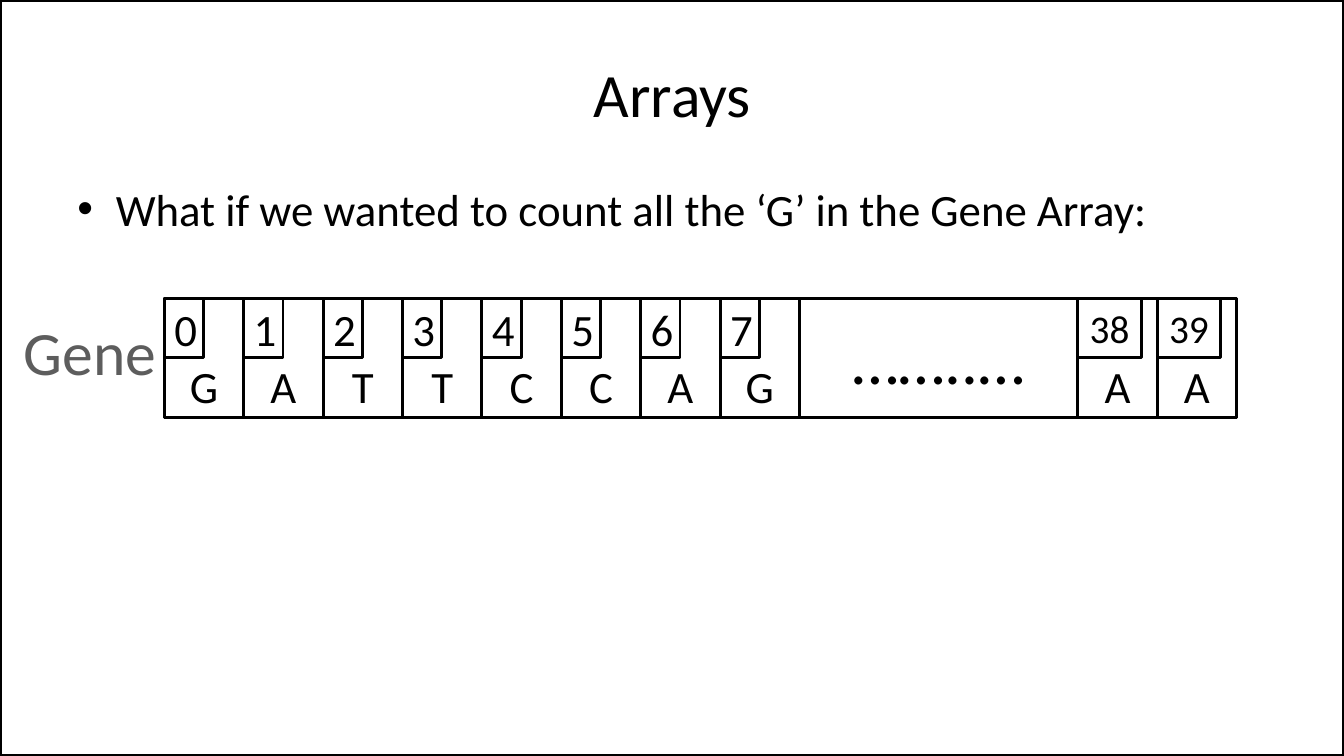
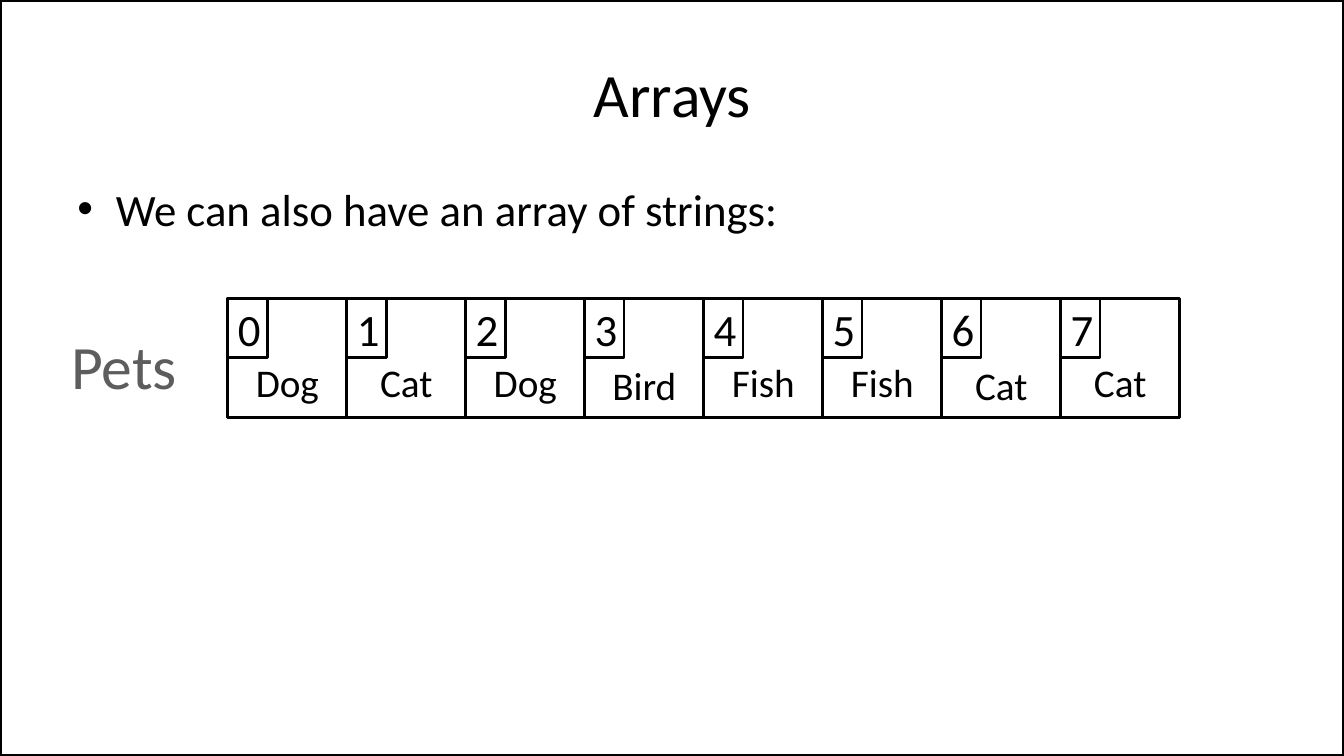
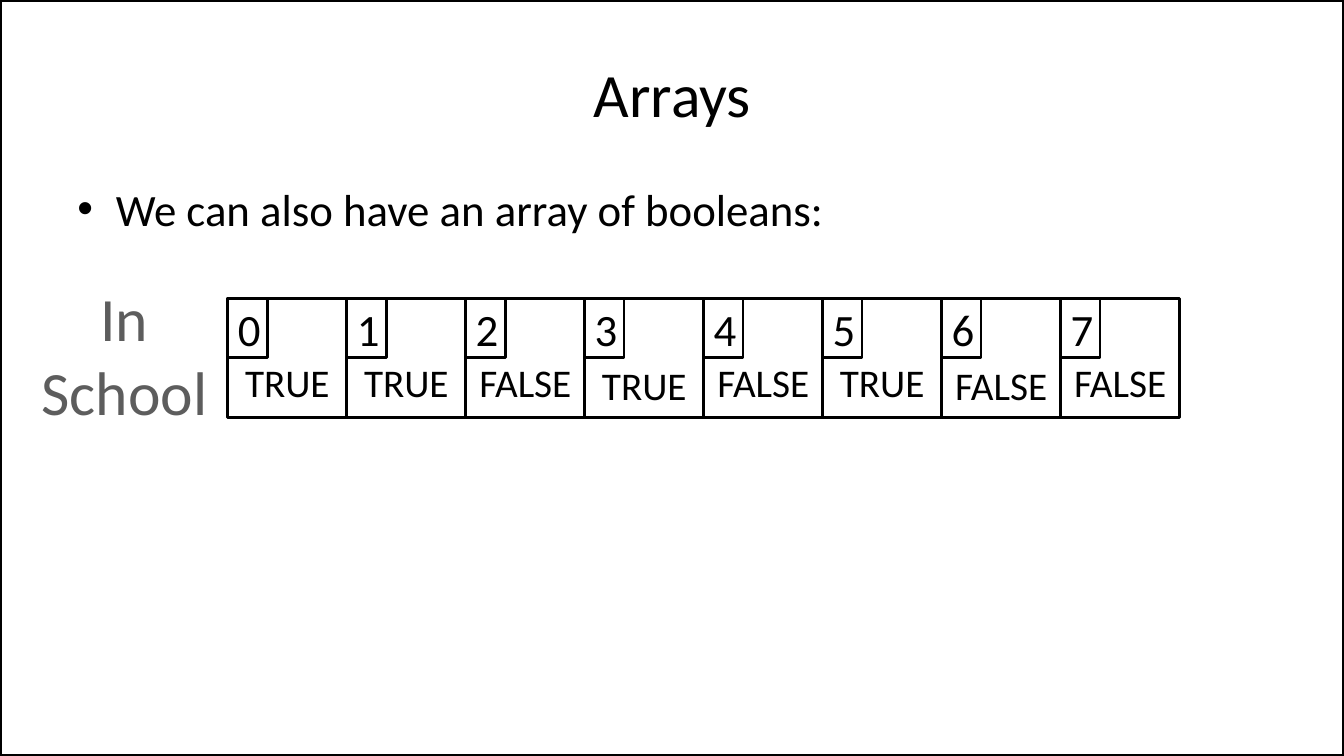
from dataclasses import dataclass

from lxml import etree
from pptx import Presentation
from pptx.dml.color import RGBColor
from pptx.enum.shapes import MSO_SHAPE
from pptx.enum.text import MSO_ANCHOR, PP_ALIGN
from pptx.oxml.ns import qn
from pptx.util import Inches, Pt


@dataclass(frozen=True)
class Theme:
    font: str = "Calibri"
    ink: RGBColor = RGBColor(0x00, 0x00, 0x00)
    label_grey: RGBColor = RGBColor(0x5D, 0x5D, 0x5D)
    title_size: int = 44
    body_size: int = 32
    small_size: int = 28
    dots_size: int = 48
    border_width: int = 3
    line_width: int = 2


PAGE_WIDTH, PAGE_HEIGHT = 13.33, 7.5
ARRAY_TOP, CELL_HEIGHT = 2.96, 1.18
INDEX_WIDTH, INDEX_HEIGHT = 0.39, 0.59
WIDE_INDEX_WIDTH = 0.63
TEXT_INSET = 0.05
LINE_HEIGHT = 1.22


class ArrayDeck:
    def __init__(self, theme):
        self.theme = theme
        self.deck = Presentation()
        self.deck.slide_width = Inches(PAGE_WIDTH)
        self.deck.slide_height = Inches(PAGE_HEIGHT)
        self.page = None

    def add_page(self, title, bullet):
        self.page = self.deck.slides.add_slide(self.deck.slide_layouts[6])
        self.rectangle(0, 0, PAGE_WIDTH, PAGE_HEIGHT, self.theme.border_width)
        self.text_box(0.67, 0.3, 12, 1.25, [title], self.theme.title_size,
                      anchor=MSO_ANCHOR.MIDDLE)
        self.text_box(0.67, 1.75, 12, 4.95, [bullet], self.theme.body_size,
                      align=PP_ALIGN.LEFT, bullet="•")

    def rectangle(self, left, top, width, height, line_width=None):
        shape = self.page.shapes.add_shape(
            MSO_SHAPE.RECTANGLE, *map(Inches, (left, top, width, height)))
        shape.shadow.inherit = False
        shape.fill.background()
        shape.line.color.rgb = self.theme.ink
        shape.line.width = Pt(line_width or self.theme.line_width)
        return shape

    def set_text(self, box, lines, size, color=None, align=PP_ALIGN.CENTER,
                 anchor=MSO_ANCHOR.MIDDLE, wrap=True, bullet=None):
        frame = box.text_frame
        frame.word_wrap = wrap
        frame.vertical_anchor = anchor
        font_format = {"name": self.theme.font, "size": Pt(size)}
        for number, line in enumerate(lines):
            para = frame.add_paragraph() if number else frame.paragraphs[0]
            para.alignment = align
            if bullet:
                self.add_bullet(para, bullet)
            span = para.add_run()
            span.text = line
            for name, value in font_format.items():
                setattr(span.font, name, value)
            span.font.color.rgb = color or self.theme.ink

    def add_bullet(self, para, mark):
        properties = para._p.get_or_add_pPr()
        properties.set("marL", str(Inches(0.38)))
        properties.set("indent", str(Inches(-0.38)))
        etree.SubElement(properties, qn("a:buFont")).set("typeface", "Arial")
        etree.SubElement(properties, qn("a:buChar")).set("char", mark)

    def text_box(self, left, top, width, height, lines, size,
                 anchor=MSO_ANCHOR.TOP, **options):
        box = self.page.shapes.add_textbox(*map(Inches, (left, top, width, height)))
        self.set_text(box, lines, size, anchor=anchor, **options)

    def array_name(self, left, top, width, height, lines):
        self.text_box(left, top, width, height, lines, self.theme.title_size,
                      color=self.theme.label_grey, wrap=False)

    def cell(self, left, width, value, size, lead):
        """Draw one value below a free line whose type size is lead."""
        box = self.rectangle(left, ARRAY_TOP, width, CELL_HEIGHT)
        box.text_frame.margin_top = Inches(TEXT_INSET + lead * LINE_HEIGHT / 72)
        self.set_text(box, [value], size)

    def index(self, left, number):
        wide = number > 9
        box = self.rectangle(left, ARRAY_TOP,
                             WIDE_INDEX_WIDTH if wide else INDEX_WIDTH, INDEX_HEIGHT)
        self.set_text(box, [str(number)],
                      self.theme.small_size if wide else self.theme.body_size)

    def cells(self, left, width, values, size, first=0, lowered=()):
        """Draw a row of numbered cells; the lowered ones have a taller free line."""
        for place, value in enumerate(values):
            cell_left = left + place * width
            lead = self.theme.body_size if place in lowered else size
            self.cell(cell_left, width, value, size, lead)
            self.index(cell_left, first + place)


def gene_page(deck):
    theme = deck.theme
    left, width, gap = 1.63, 6.3 / 8, 2.76
    gap_left = left + 8 * width
    deck.add_page("Arrays", "What if we wanted to count all the ‘G’ in the Gene Array:")
    deck.rectangle(left, ARRAY_TOP, 10 * width + gap, CELL_HEIGHT)
    deck.cells(left, width, "GATTCCAG", theme.body_size)
    dots = deck.rectangle(gap_left, ARRAY_TOP, gap, CELL_HEIGHT)
    deck.set_text(dots, ["……..…"], theme.dots_size)
    deck.cells(gap_left + gap, width, "AA", theme.body_size, first=38)
    deck.array_name(0.13, 3.07, 1.53, 0.84, ["Gene"])


def word_page(deck, bullet, name_place, name_lines, values):
    deck.add_page("Arrays", bullet)
    deck.array_name(*name_place, name_lines)
    deck.cells(2.26, 1.18, values, deck.theme.small_size, lowered=(3, 6))


def main():
    deck = ArrayDeck(Theme())
    gene_page(deck)
    word_page(deck, "We can also have an array of strings:",
              (0.6, 3.2, 1.26, 0.84), ["Pets"],
              ["Dog", "Cat", "Dog", "Bird", "Fish", "Fish", "Cat", "Cat"])
    word_page(deck, "We can also have an array of booleans:",
              (0.3, 2.73, 1.87, 1.58), ["In", "School"],
              ["TRUE", "TRUE", "FALSE", "TRUE", "FALSE", "TRUE", "FALSE", "FALSE"])
    deck.deck.save("out.pptx")


if __name__ == "__main__":
    main()
